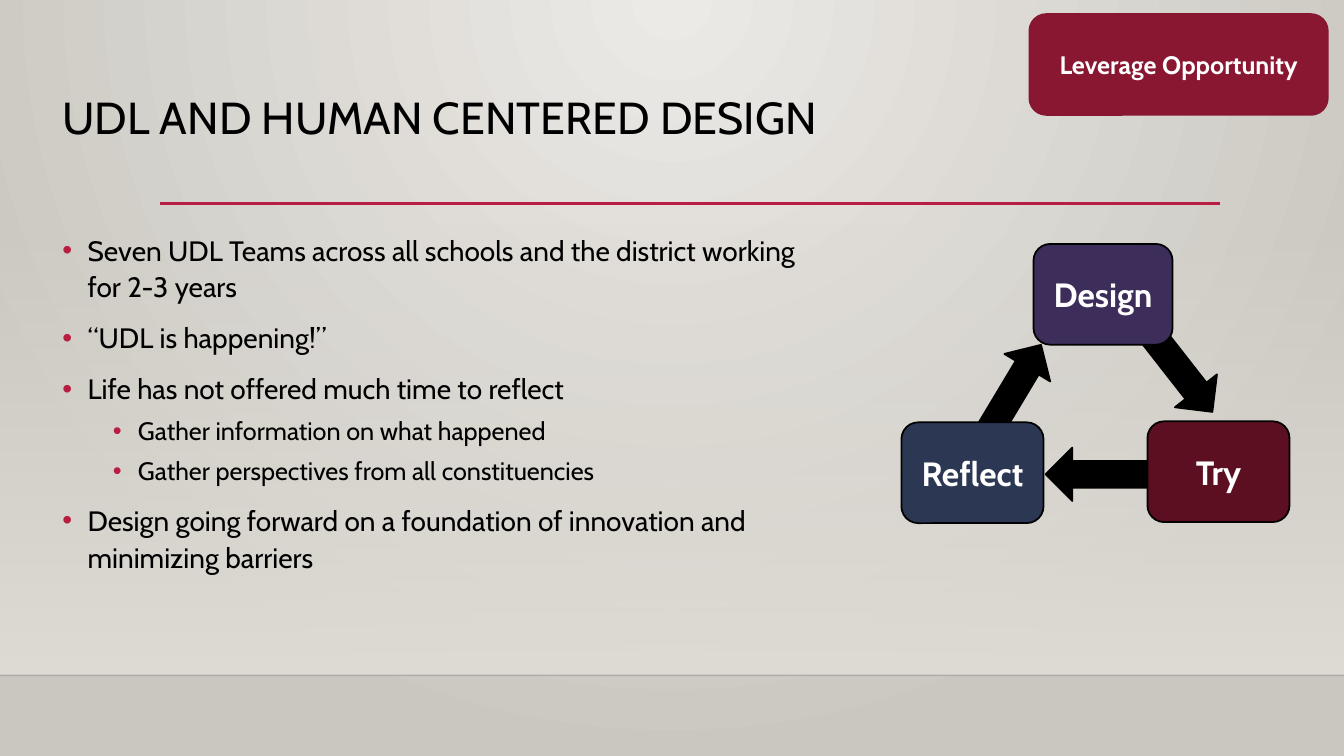
from lxml import etree
from pptx import Presentation
from pptx.dml.color import RGBColor
from pptx.enum.shapes import MSO_CONNECTOR, MSO_SHAPE
from pptx.enum.text import MSO_ANCHOR, PP_ALIGN
from pptx.oxml.ns import qn
from pptx.util import Inches, Pt

STRAIGHT = MSO_CONNECTOR.STRAIGHT
RECTANGLE = MSO_SHAPE.RECTANGLE
ROUNDED = MSO_SHAPE.ROUNDED_RECTANGLE
ARROW = MSO_SHAPE.RIGHT_ARROW
TOP, MIDDLE = MSO_ANCHOR.TOP, MSO_ANCHOR.MIDDLE
CENTER = PP_ALIGN.CENTER

COLORS = {
    "glow": "ECEAE7", "edge": "CAC7C1", "wall": "DFDBD5", "floor": "000001",
    "accent": "B71E42", "black": "000000", "white": "FFFFFF",
    "badge": "891731", "badge_line": "871631",
    "design": "3C2D5A", "try": "5C0F21", "reflect": "2C3753",
}
FONT = "Cabin"


def rgb(name):
    return RGBColor.from_string(COLORS[name])


def style_font(font, size, color, bold=False):
    font.color.rgb = rgb(color)
    for key, value in {"name": FONT, "size": Pt(size), "bold": bold}.items():
        setattr(font, key, value)


prs = Presentation()
prs.slide_width, prs.slide_height = Inches(13.33), Inches(7.5)
slide = prs.slides.add_slide(prs.slide_layouts[6])

backdrop = slide.background.fill
backdrop.gradient()
for stop, color in zip(backdrop.gradient_stops, ("glow", "edge")):
    stop.color.rgb = rgb(color)
radial = slide._element.xpath(".//p:bg//a:gradFill")[0]
radial.remove(radial.find(qn("a:lin")))
circle = etree.SubElement(radial, qn("a:path"), path="circle")
etree.SubElement(circle, qn("a:fillToRect"), l="43000", t="0", r="43000", b="100000")

wall = slide.shapes.add_shape(RECTANGLE, 0, Inches(2.21), Inches(13.33), Inches(4.49))
wall.shadow.inherit = False
wall.line.fill.background()
wall.fill.gradient()
wall.fill.gradient_angle = 270
for stop in wall.fill.gradient_stops:
    stop.color.rgb = rgb("wall")
clear_stop = wall._element.xpath(".//a:gs/a:srgbClr")[0]
etree.SubElement(clear_stop, qn("a:alpha"), val="0")

RULES = [(0, 13.33, 6.7, "floor", 1, 20), (1.59, 12.1, 2.02, "accent", 2.5, 100)]
for start, end, y, color, width, opacity in RULES:
    rule = slide.shapes.add_connector(STRAIGHT, Inches(start), Inches(y), Inches(end), Inches(y))
    rule.line.color.rgb = rgb(color)
    rule.line.width = Pt(width)
    etree.SubElement(rule._element.spPr, qn("a:effectLst"))
    if opacity < 100:
        tint = rule._element.xpath(".//a:ln//a:srgbClr")[0]
        etree.SubElement(tint, qn("a:alpha"), val=str(opacity * 1000))

title = slide.shapes.add_textbox(Inches(0.52), Inches(0.9), Inches(10.5), Inches(1.15))
body = slide.shapes.add_textbox(Inches(0.52), Inches(2.23), Inches(7.69), Inches(3.76))
for box in (title, body):
    box.text_frame.word_wrap = True
    box.text_frame.vertical_anchor = TOP

heading = title.text_frame.paragraphs[0]
heading.text = "UDL AND HUMAN CENTERED DESIGN"
heading.line_spacing = 0.9
style_font(heading.font, 32, "black")

POINTS = [
    (0, "Seven UDL Teams across all schools and the district working for 2-3 years"),
    (0, "“UDL is happening!”"),
    (0, "Life has not offered much time to reflect"),
    (1, "Gather information on what happened"),
    (1, "Gather perspectives from all constituencies"),
    (0, "Design going forward on a foundation of innovation and minimizing barriers"),
]
LEVELS = [(20, 10, 0.25), (18, 5, 0.75)]
for index, (level, text) in enumerate(POINTS):
    size, space, margin = LEVELS[level]
    point = body.text_frame.paragraphs[0] if index == 0 else body.text_frame.add_paragraph()
    point.text = text
    point.level = level
    point.line_spacing = 1.1
    point.space_before = Pt(space if index else 0)
    props = point._p.get_or_add_pPr()
    props.set("marL", str(Inches(margin)))
    props.set("indent", str(Inches(-0.25)))
    bullet_color = etree.SubElement(props, qn("a:buClr"))
    etree.SubElement(bullet_color, qn("a:srgbClr"), val=COLORS["accent"])
    etree.SubElement(props, qn("a:buFont"), typeface="Arial")
    etree.SubElement(props, qn("a:buChar"), char="•")
    style_font(point.font, size, "black")

CYCLE = [
    (ROUNDED, 10.21, 0.14, 2.96, 1, 0, "badge", "badge_line", "Leverage Opportunity", 18),
    (ARROW, 11.16, 3.4, 1.07, 0.53, 52, "black", "black", "", 24),
    (ROUNDED, 10.25, 2.42, 1.38, 1, 0, "design", "black", "Design", 24),
    (ARROW, 10.37, 4.44, 1.07, 0.53, 180, "black", "black", "", 24),
    (ROUNDED, 11.38, 4.18, 1.41, 1, 0, "try", "black", "Try", 24),
    (ARROW, 9.31, 3.73, 1.34, 0.53, 301, "black", "black", "", 24),
    (ROUNDED, 8.94, 4.19, 1.41, 1, 0, "reflect", "black", "Reflect", 24),
]
for kind, left, top, width, height, angle, fill, outline, label, size in CYCLE:
    step = slide.shapes.add_shape(kind, Inches(left), Inches(top), Inches(width), Inches(height))
    step.shadow.inherit = False
    step.rotation = angle
    step.fill.solid()
    step.fill.fore_color.rgb = rgb(fill)
    step.line.color.rgb = rgb(outline)
    step.line.width = Pt(1.25)
    if label:
        step.text_frame.word_wrap = True
        step.text_frame.vertical_anchor = MIDDLE
        caption = step.text_frame.paragraphs[0]
        caption.text = label
        caption.alignment = CENTER
        style_font(caption.font, size, "white", True)

prs.save("out.pptx")
